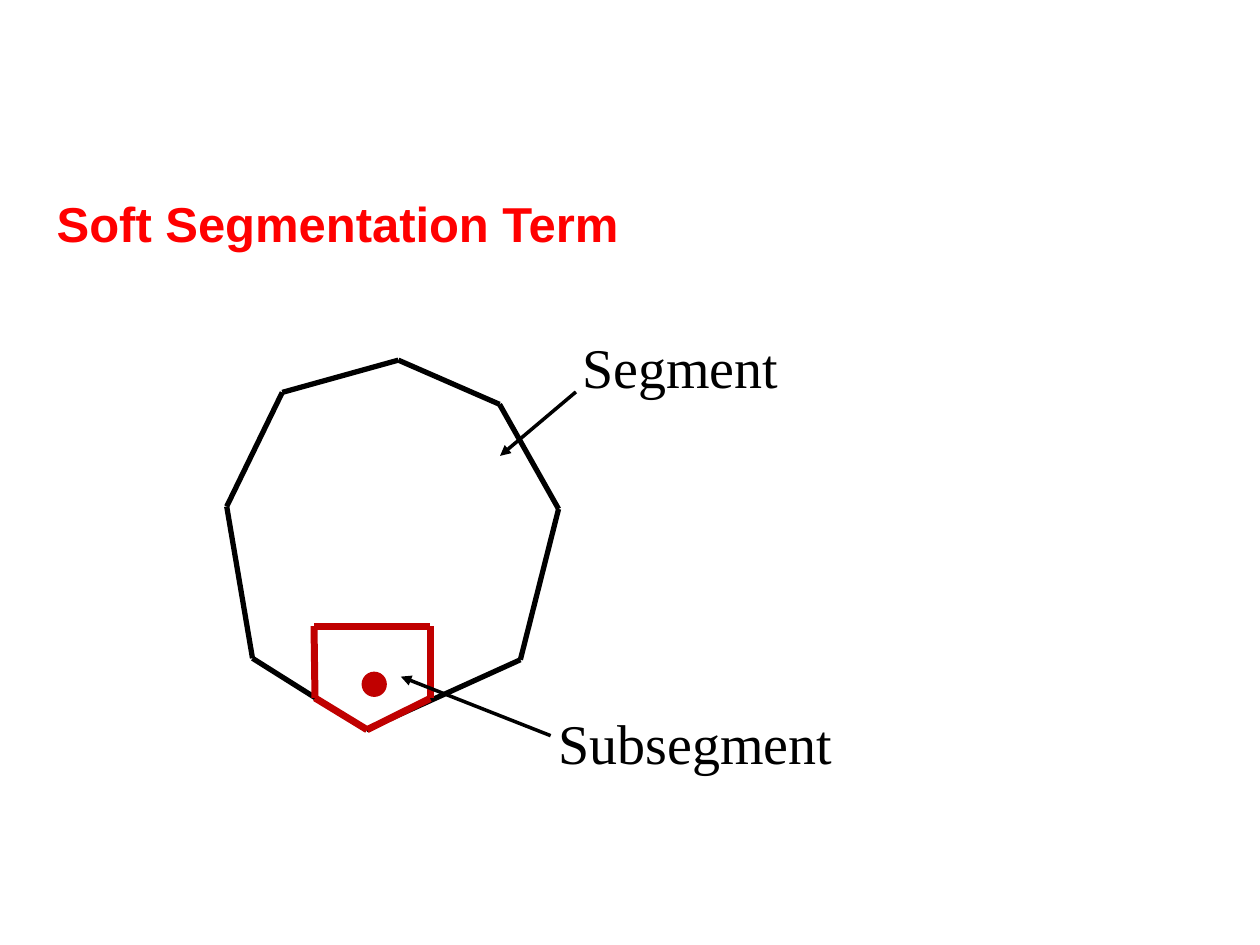
from pptx import Presentation
from pptx.dml.color import RGBColor
from pptx.enum.shapes import MSO_CONNECTOR, MSO_SHAPE
from pptx.enum.text import MSO_ANCHOR, PP_ALIGN
from pptx.oxml.ns import qn
from pptx.util import Cm, Pt
from lxml.etree import SubElement

# Content: lengths in cm
COLORS = {"title": "FF0000", "ink": "000000", "accent": "C00000"}
TITLE = "Soft Segmentation Term"
TITLE_BOX = (0.89, 3.86, 23.65, 1.27)
SEGMENT = [(4.57, 10.21), (5.69, 7.91), (8.03, 7.26), (10.07, 8.15),
           (11.26, 10.26), (10.49, 13.3), (7.38, 14.71), (5.09, 13.27)]
SUBSEGMENT = [(6.33, 12.62), (8.67, 12.62), (8.67, 14.08), (7.4, 14.71),
              (6.35, 14.07)]
DOT = (7.29, 13.54, 0.51, 0.51)
LABEL_SIZE = (6.81, 1.63)
LABELS = [  # text, corner, arrow start, arrow end
    ("Segment", (10.31, 6.58), (11.61, 7.9), (10.08, 9.19)),
    ("Subsegment", (10.62, 14.15), (11.1, 14.83), (8.08, 13.64)),
]


def rgb(name):
    return RGBColor.from_string(COLORS[name])


def cm(*values):
    return [Cm(v) for v in values]


def add_line(shapes, start, end, color, width, arrow=False):
    sp = shapes.add_connector(MSO_CONNECTOR.STRAIGHT, *cm(*start, *end))
    sp.line.color.rgb = rgb(color)
    sp.line.width = Pt(width)
    sp_pr = sp._element.spPr
    if arrow:
        SubElement(sp_pr.find(qn("a:ln")), qn("a:tailEnd"), type="triangle")
    SubElement(sp_pr, qn("a:effectLst"))


def add_outline(shapes, points, color, width):
    for start, end in zip(points, points[1:] + points[:1]):
        add_line(shapes, start, end, color, width)


def write(sp, text, align, color, **font):
    tf = sp.text_frame
    tf.word_wrap = True
    p = tf.paragraphs[0]
    p.alignment = align
    r = p.add_run()
    r.text = text
    r.font.color.rgb = rgb(color)
    for key, value in font.items():
        setattr(r.font, key, value)
    return tf


prs = Presentation()
prs.slide_width, prs.slide_height = cm(25.4, 19.05)
s = prs.slides.add_slide(prs.slide_layouts[5])

# Title
title = s.shapes.title
title.left, title.top, title.width, title.height = cm(*TITLE_BOX)
tf = write(title, TITLE, PP_ALIGN.LEFT, "title",
           name="Arial", size=Pt(28), bold=True)
tf.vertical_anchor = MSO_ANCHOR.MIDDLE

# Segment outline, then the subsegment with its centre dot
add_outline(s.shapes.add_group_shape().shapes, SEGMENT, "ink", 3)
dot = s.shapes.add_shape(MSO_SHAPE.OVAL, *cm(*DOT))
dot.shadow.inherit = False
dot.fill.solid()
dot.fill.fore_color.rgb = rgb("accent")
dot.line.fill.background()
add_outline(s.shapes, SUBSEGMENT, "accent", 4)

# Labels and their arrows
for text, corner, start, end in LABELS:
    box = s.shapes.add_textbox(*cm(*corner, *LABEL_SIZE))
    write(box, text, PP_ALIGN.CENTER, "ink",
          name="Times New Roman", size=Pt(32))
    add_line(s.shapes, start, end, "ink", 2, arrow=True)

prs.save("out.pptx")
